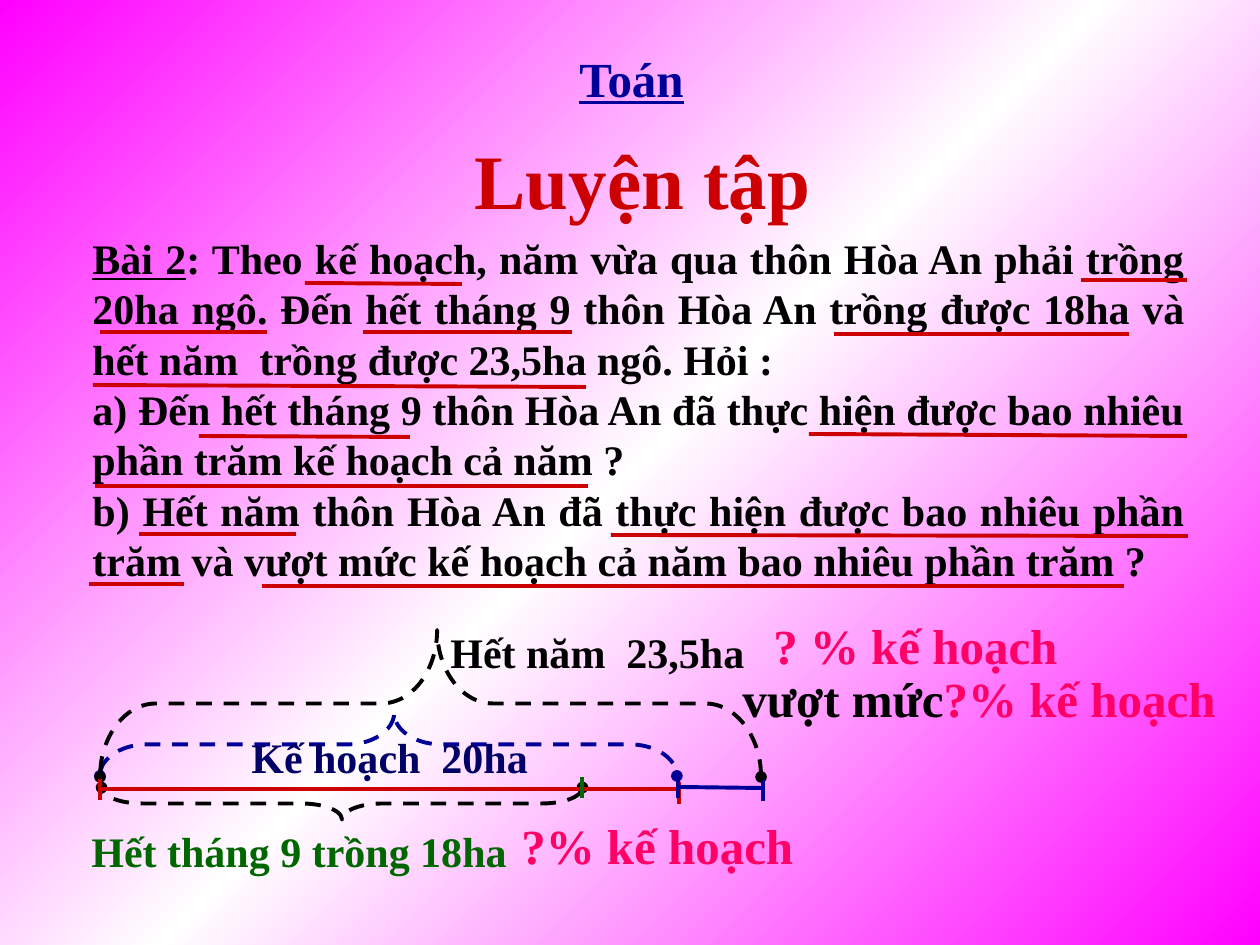
"""Build a maths practice slide with a word problem and its segment diagram."""
from copy import deepcopy

from lxml import etree
from pptx import Presentation
from pptx.dml.color import RGBColor
from pptx.enum.dml import MSO_LINE
from pptx.enum.shapes import MSO_CONNECTOR, MSO_SHAPE
from pptx.enum.text import MSO_ANCHOR, MSO_AUTO_SIZE, PP_ALIGN
from pptx.oxml.ns import qn
from pptx.util import Inches, Pt

PX = Inches(10) / 1260
STRAIGHT = MSO_CONNECTOR.STRAIGHT
BRACE = MSO_SHAPE.RIGHT_BRACE
DASH = MSO_LINE.DASH
TOP = MSO_ANCHOR.TOP
NO_FIT = MSO_AUTO_SIZE.NONE
LEFT, JUSTIFY = PP_ALIGN.LEFT, PP_ALIGN.JUSTIFY
MAGENTA = RGBColor(0xFF, 0x00, 0xFF)
WHITE = RGBColor(0xFF, 0xFF, 0xFF)
RED = RGBColor(0xCC, 0x00, 0x00)
BLUE = RGBColor(0x00, 0x00, 0x99)
NAVY = RGBColor(0x00, 0x00, 0x66)
GREEN = RGBColor(0x00, 0x66, 0x00)
PINK = RGBColor(0xFF, 0x00, 0x66)
BLACK = RGBColor(0x00, 0x00, 0x00)


def place(box, left, top, width, height):
    box.left, box.top = round(left * PX), round(top * PX)
    box.width, box.height = round(width * PX), round(height * PX)
    frame = box.text_frame
    frame.word_wrap = True
    frame.auto_size = NO_FIT
    frame.vertical_anchor = TOP
    return frame


def write(paragraph, size, spans):
    for text, color, underline in spans:
        span = paragraph.add_run()
        span.text = text
        span.font.name = "Times New Roman"
        span.font.size = Pt(size)
        span.font.bold = True
        span.font.underline = underline
        span.font.color.rgb = color


deck = Presentation()
deck.slide_width, deck.slide_height = Inches(10), Inches(7.5)
page = deck.slides.add_slide(deck.slide_layouts[1])

fill = page.background.fill
fill.gradient()
fill.gradient_angle = 315
start, middle = fill.gradient_stops
start.color.rgb, start.position = MAGENTA, 0
middle.color.rgb, middle.position = WHITE, 0.5
stops = next(page.element.iter(qn("a:gsLst")))
stops.append(deepcopy(stops[0]))
stops[-1].set("pos", "100000")

title, body = page.placeholders
heading = place(title, 462, 126, 420, 105).paragraphs[0]
heading.alignment = LEFT
write(heading, 44, [("Luyện tập", RED, False)])

problem = [
    [("Bài 2", BLACK, True),
     (": Theo kế hoạch, năm vừa qua thôn Hòa An phải trồng 20ha ngô. "
      "Đến hết tháng 9 thôn Hòa An trồng được 18ha và hết năm  trồng được "
      "23,5ha ngô. Hỏi :", BLACK, False)],
    [("a) Đến hết tháng 9 thôn Hòa An đã thực hiện được bao nhiêu phần trăm "
      "kế hoạch cả năm ?", BLACK, False)],
    [("b) Hết năm thôn Hòa An đã thực hiện được bao nhiêu phần trăm và vượt "
      "mức kế hoạch cả năm bao nhiêu phần trăm ?", BLACK, False)],
]
frame = place(body, 32, 226, 1165, 365)
for number, spans in enumerate(problem):
    paragraph = frame.add_paragraph() if number else frame.paragraphs[0]
    paragraph.alignment = JUSTIFY
    paragraph.space_before = Pt(0)
    properties = paragraph._p.get_or_add_pPr()
    properties.set("marL", str(Inches(0.38)))
    properties.set("indent", "0")
    etree.SubElement(properties, qn("a:buNone"))
    write(paragraph, 24, spans)

braces = [
    (357, 456, 63, 577, 0.75, 0.51, BLUE, True),
    (326, 563, 32, 481, 1.27, 0.5, BLACK, False),
    (357, 373, 147, 661, 0.38, 0.51, BLACK, True),
]
for left, top, width, height, curve, point, color, flipped in braces:
    brace = page.shapes.add_shape(
        BRACE, *(round(side * PX) for side in (left, top, width, height)))
    brace.rotation = 90
    brace.adjustments[0], brace.adjustments[1] = curve, point
    brace.shadow.inherit = False
    brace.fill.background()
    brace.line.color.rgb = color
    brace.line.width = Pt(2.25)
    brace.line.dash_style = DASH
    outline = brace.line._get_or_add_ln()
    for end in ("a:headEnd", "a:tailEnd"):
        etree.SubElement(outline, qn(end)).set("type", "oval")
    if flipped:
        frame_position = brace._element.spPr.find(qn("a:xfrm"))
        frame_position.set("flipH", "1")
        frame_position.set("flipV", "1")

diagram_lines = [
    (100, 779, 100, 800, RED), (100, 789, 678, 789, RED),
    (679, 782, 679, 804, RED), (582, 777, 582, 798, GREEN),
    (678, 777, 678, 798, BLUE), (678, 787, 762, 788, BLUE),
    (763, 780, 763, 801, BLUE),
]
underlines = [
    (305, 283, 462, 284), (1081, 280, 1187, 280), (100, 332, 267, 332),
    (363, 332, 572, 332), (834, 334, 1129, 334), (93, 385, 586, 387),
    (199, 436, 410, 437), (809, 434, 1187, 436), (95, 486, 588, 486),
    (139, 534, 296, 534), (611, 535, 1188, 536), (262, 586, 1124, 586),
    (89, 584, 184, 584),
]
for *ends, color in diagram_lines + [(*ends, RED) for ends in underlines]:
    line = page.shapes.add_connector(STRAIGHT, *(round(end * PX) for end in ends))
    line.line.color.rgb = color
    line.line.width = Pt(2.25)
    etree.SubElement(line._element.spPr, qn("a:effectLst"))

labels = [
    (567, 42, 158, 72, 28, [("Toán", BLUE, True)]),
    (239, 725, 321, 63, 24, [("Kế hoạch  20ha", NAVY, False)]),
    (79, 819, 483, 63, 24, [("Hết tháng 9 trồng 18ha", GREEN, False)]),
    (438, 620, 396, 63, 24, [("Hết năm  23,5ha", BLACK, False)]),
    (509, 809, 315, 72, 28, [("?% kế hoạch", PINK, False)]),
    (761, 609, 325, 72, 28, [("? % kế hoạch", PINK, False)]),
    (730, 662, 514, 72, 28,
     [("vượt mức", BLACK, False), ("?% kế hoạch", PINK, False)]),
]
for left, top, width, height, size, spans in labels:
    label = page.shapes.add_textbox(0, 0, 0, 0)
    write(place(label, left, top, width, height).paragraphs[0], size, spans)

deck.save("out.pptx")
